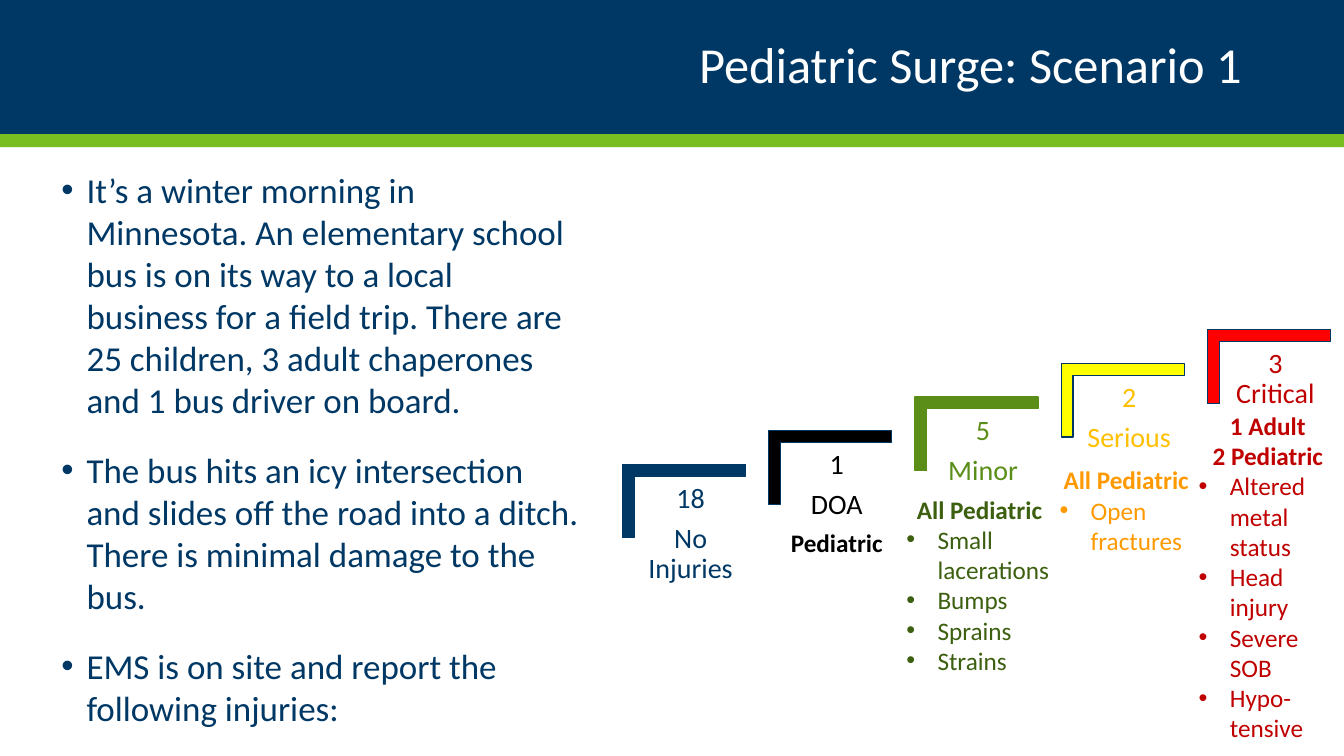
from pptx import Presentation
from pptx.dml.color import RGBColor
from pptx.enum import shapes, text
from pptx.oxml import parse_xml
from pptx.oxml.ns import nsdecls
from pptx.util import Inches, Pt

NAVY = "003865"
GREEN = "78BE21"
WHITE = "FFFFFF"
FONT = "Calibri"

SCENARIO = [
    "It’s a winter morning in Minnesota. An elementary school bus is on its way to a local "
    "business for a field trip. There are 25 children, 3 adult chaperones and 1 bus driver on board.",
    "The bus hits an icy intersection and slides off the road into a ditch. "
    "There is minimal damage to the bus.",
    "EMS is on site and report the following injuries:",
]

STEPS = [
    (NAVY, NAVY, NAVY, 1.31, ["18", "No Injuries"]),
    ("000000", NAVY, "000000", 1.1, ["1", "DOA", "Pediatric"]),
    ("5A8E19", "5A8E19", "5A8E19", 1.1, ["5", "Minor"]),
    ("FFFF00", NAVY, "FFC000", 1.1, ["2", "Serious"]),
    ("FF0000", NAVY, "C00000", 1.1, ["3 Critical"]),
]

INJURIES = [
    ((8.89, 4.85, 1.65, 1.92), "3C5F10", ["All Pediatric"],
     ["Small lacerations", "Bumps", "Sprains", "Strains"]),
    ((10.41, 4.56, 1.52, 1.01), "FF9900", ["All Pediatric"], ["Open fractures"]),
    ((11.79, 4.02, 1.57, 3.43), "C00000", ["1 Adult", "2 Pediatric"],
     ["Altered metal status", "Head injury", "Severe SOB", "Hypo-tensive"]),
]


def color(value):
    return RGBColor.from_string(value)


def add_filled(slide, kind, box, fill, outline=None):
    shape = slide.shapes.add_shape(kind, *map(Inches, box))
    shape.shadow.inherit = False
    shape.fill.solid()
    shape.fill.fore_color.rgb = color(fill)
    if outline:
        shape.line.color.rgb = color(outline)
        shape.line.width = Pt(0.85)
    else:
        shape.line.fill.background()
    return shape


def add_text(slide, box, lines, size, ink, align=text.PP_ALIGN.LEFT):
    frame = slide.shapes.add_textbox(*map(Inches, box)).text_frame
    frame.word_wrap = True
    frame.text = "\n".join(lines)
    for paragraph in frame.paragraphs:
        paragraph.alignment = align
        style_runs(paragraph, size, ink)
    return frame


def style_runs(paragraph, size, ink, bold=False):
    for run in paragraph.runs:
        run.font.name = FONT
        run.font.size = Pt(size)
        run.font.bold = bold
        run.font.color.rgb = color(ink)


def add_bullet(paragraph, indent):
    properties = paragraph._p.get_or_add_pPr()
    properties.set("marL", str(Inches(indent)))
    properties.set("indent", str(-Inches(indent)))
    for tag in ('buFont typeface="Arial"', 'buChar char="•"'):
        properties.append(parse_xml(f'<a:{tag} {nsdecls("a")}/>'))


def add_header(slide):
    rectangle = shapes.MSO_SHAPE.RECTANGLE
    add_filled(slide, rectangle, (0, 0, 13.33, 1.33), NAVY)
    add_filled(slide, rectangle, (0, 1.33, 13.33, 0.13), GREEN)
    title = add_text(slide, (0.92, 0.17, 11.5, 1), ["Pediatric Surge: Scenario 1"],
                     36, WHITE, text.PP_ALIGN.RIGHT)
    title.vertical_anchor = text.MSO_ANCHOR.MIDDLE
    title.paragraphs[0].line_spacing = 0.9


def add_scenario(slide):
    story = add_text(slide, (0.51, 1.62, 5.35, 5.76), SCENARIO, 25, NAVY)
    for paragraph in story.paragraphs:
        paragraph.space_before = paragraph.space_after = Pt(10)
        add_bullet(paragraph, 0.25)


def add_step(slide, index, fill, outline, ink, width, lines):
    left = 6.42 + 1.45 * index
    top = 4.36 - 0.333 * index
    bracket = add_filled(slide, shapes.MSO_SHAPE.CORNER, (left, top, 0.73, 1.22), fill, outline)
    bracket.rotation = 90
    bracket.adjustments[0] = bracket.adjustments[1] = 0.161
    label = add_text(slide, (left + 0.43 - width / 2, top + 0.36, width, 0.96),
                     lines, 20, ink, text.PP_ALIGN.CENTER)
    label.margin_left = label.margin_right = Inches(0.08)
    label.margin_top = label.margin_bottom = Inches(0.08)
    for paragraph in label.paragraphs:
        paragraph.line_spacing = 0.9
        paragraph.space_after = Pt(7)
    for paragraph in label.paragraphs[2:]:
        style_runs(paragraph, 18, ink, bold=True)


def add_injuries(slide, box, ink, patients, findings):
    details = add_text(slide, box, patients + findings, 18, ink)
    for position, paragraph in enumerate(details.paragraphs):
        if position < len(patients):
            paragraph.alignment = text.PP_ALIGN.CENTER
            style_runs(paragraph, 18, ink, bold=True)
        else:
            add_bullet(paragraph, 0.31)


def main():
    deck = Presentation()
    deck.slide_width = Inches(13.33)
    deck.slide_height = Inches(7.5)
    slide = deck.slides.add_slide(deck.slide_layouts[6])
    add_header(slide)
    add_scenario(slide)
    for index, step in enumerate(STEPS):
        add_step(slide, index, *step)
    for injuries in INJURIES:
        add_injuries(slide, *injuries)
    deck.save("out.pptx")


if __name__ == "__main__":
    main()
